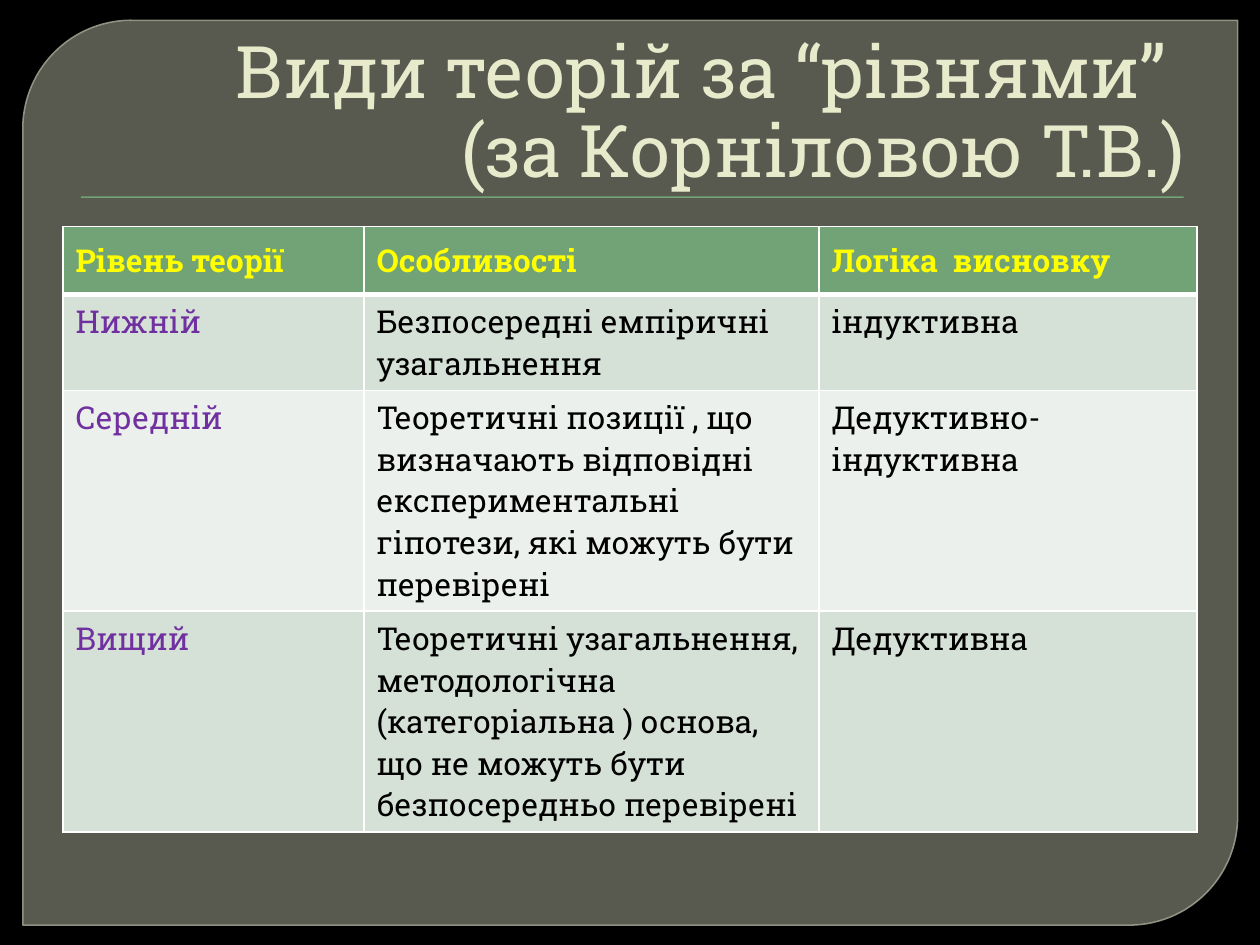
"""Build a slide with a table of theory levels."""
from lxml import etree
from pptx import Presentation, util as u
from pptx.dml.color import RGBColor
from pptx.enum import shapes, text
from pptx.oxml.ns import qn

FONT = "Roboto Slab"
COLORS = {
    "background": "000000", "panel": "888B7B", "outline": "9DA090",
    "accent": "72A376", "title": "E7EACB", "heading": "FFFF00",
    "level": "7030A0", "body": "000000", "border": "FFFFFF",
    "odd": "D5E0D6", "even": "EBF0EC",
}
TITLE = "Види теорій за “рівнями” \v(за Корніловою Т.В.)"
ROWS = [
    ("Рівень теорії", "Особливості", "Логіка  висновку"),
    ("Нижній", "Безпосередні емпіричні узагальнення", "індуктивна"),
    ("Середній", "Теоретичні позиції , що  визначають відповідні "
     "експериментальні гіпотези, які можуть бути перевірені",
     "Дедуктивно-індуктивна"),
    ("Вищий", "Теоретичні узагальнення, методологічна (категоріальна ) "
     "основа, що не можуть бути безпосередньо перевірені", "Дедуктивна"),
]
COLUMN_WIDTHS = (6.07, 9.17, 7.62)
ROW_HEIGHTS = (1.37, 1.93, 4.45, 4.45)


def paint(fill, name, opacity=100):
    """Give a fill a solid colour and an opacity in percent."""
    fill.solid()
    fill.fore_color.rgb = RGBColor.from_string(COLORS[name])
    if opacity < 100:
        color = next(fill._xPr.iter(qn("a:srgbClr")))
        etree.SubElement(color, qn("a:alpha"), val=str(opacity * 1000))


def style(para, size, name, bold=False):
    """Set the font of a paragraph."""
    font = para.font
    font.name, font.size, font.bold = FONT, u.Pt(size), bold
    font.color.rgb = RGBColor.from_string(COLORS[name])


def add_panel(page):
    """Add the translucent panel with two rounded corners."""
    panel = page.shapes.add_shape(
        shapes.MSO_SHAPE.ROUND_2_DIAG_RECTANGLE,
        u.Cm(0.46), u.Cm(0.41), u.Cm(24.49), u.Cm(18.24))
    panel.adjustments[0], panel.adjustments[1] = 0.12, 0
    panel.shadow.inherit = False
    paint(panel.fill, "panel", 65)
    panel.line.width = u.Pt(0.87)
    paint(panel.line.fill, "outline", 88)


def add_rule(page):
    """Add the thin bar under the title."""
    rule = page.shapes.add_shape(
        shapes.MSO_SHAPE.RECTANGLE,
        u.Cm(1.63), u.Cm(3.96), u.Cm(22.23), u.Cm(0.03))
    rule.shadow.inherit = False
    paint(rule.fill, "accent")
    rule.line.fill.background()


def add_title(page):
    """Add the right-aligned title."""
    box = page.shapes.add_textbox(
        u.Cm(1.27), u.Cm(0.71), u.Cm(22.86), u.Cm(3.18))
    frame = box.text_frame
    frame.word_wrap = True
    frame.vertical_anchor = text.MSO_ANCHOR.BOTTOM
    frame.margin_bottom = 0
    para = frame.paragraphs[0]
    para.text = TITLE
    para.alignment = text.PP_ALIGN.RIGHT
    para.line_spacing = 0.9
    style(para, 41.4, "title")


def add_borders(cell, bottom):
    """Draw white borders round a cell, with its own bottom width."""
    props = cell._tc.get_or_add_tcPr()
    for index, (side, width) in enumerate(
            (("L", 1), ("R", 1), ("T", 1), ("B", bottom))):
        line = etree.Element(qn(f"a:ln{side}"), w=str(u.Pt(width)))
        solid = etree.SubElement(line, qn("a:solidFill"))
        etree.SubElement(solid, qn("a:srgbClr"), val=COLORS["border"])
        props.insert(index, line)


def fill_cell(cell, words, row, column):
    """Write and colour one cell according to its place."""
    header = row == 0
    cell.text = words
    if header:
        cell.vertical_anchor = text.MSO_ANCHOR.MIDDLE
        ground, ink = "accent", "heading"
    else:
        ground = "odd" if row % 2 else "even"
        ink = "body" if column else "level"
    paint(cell.fill, ground)
    style(cell.text_frame.paragraphs[0], 18, ink, header)
    add_borders(cell, 3 if header else 1)


def add_levels_table(page):
    """Add the table of theory levels."""
    table = page.shapes.add_table(
        len(ROWS), len(COLUMN_WIDTHS), u.Cm(1.27), u.Cm(4.57),
        u.Cm(sum(COLUMN_WIDTHS)), u.Cm(sum(ROW_HEIGHTS))).table
    for column, width in zip(table.columns, COLUMN_WIDTHS):
        column.width = u.Cm(width)
    for row, height in zip(table.rows, ROW_HEIGHTS):
        row.height = u.Cm(height)
    for r, row in enumerate(ROWS):
        for c, words in enumerate(row):
            fill_cell(table.cell(r, c), words, r, c)


def main():
    """Build and save the deck."""
    deck = Presentation()
    deck.slide_width, deck.slide_height = u.Cm(25.4), u.Cm(19.05)
    page = deck.slides.add_slide(deck.slide_layouts[6])
    paint(page.background.fill, "background")
    add_panel(page)
    add_rule(page)
    add_title(page)
    add_levels_table(page)
    deck.save("out.pptx")


if __name__ == "__main__":
    main()
